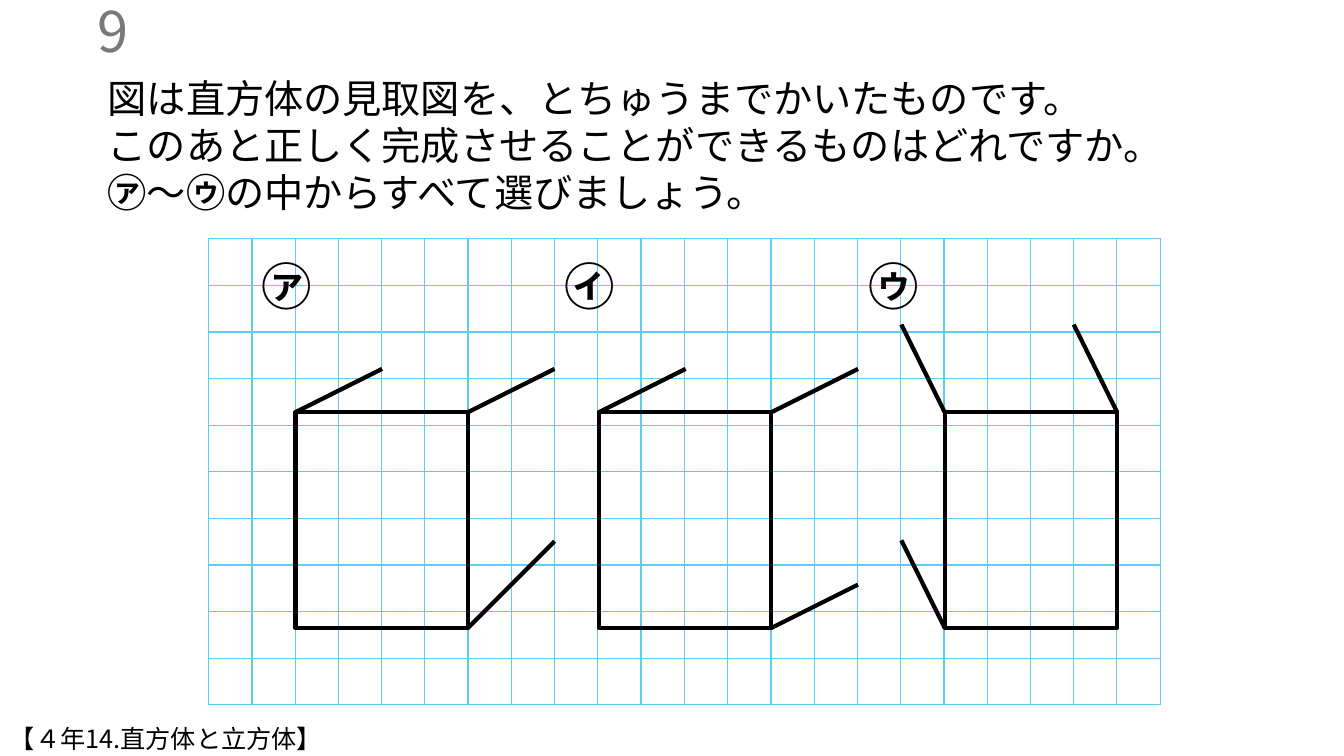
from lxml import etree
from pptx import Presentation, util as u
from pptx.dml.color import RGBColor
from pptx.enum import shapes, text
from pptx.oxml import ns

FONT = "Noto Sans CJK JP"
INK, GRAY, SKY = "000000", "797979", "61CBF4"


def color(code):
    return RGBColor.from_string(code)


def child(node, tag, **attrs):
    return etree.SubElement(node, ns.qn(tag), attrs)


class Page:
    """Holds the style and the current slide."""

    def __init__(self, deck):
        self.slide = deck.slides.add_slide(deck.slide_layouts[6])
        self.items = self.slide.shapes

    def stroke(self, line):
        line.color.rgb = color(INK)
        line.width = u.Pt(3)

    def grid(self, left, top, rows, cols, step):
        frame = self.items.add_table(
            rows, cols, u.Inches(left), u.Inches(top),
            u.Inches(cols * step), u.Inches(rows * step))
        table = frame.table
        table.first_row = table.horz_banding = False
        for row in table.rows:
            row.height = u.Inches(step)
        for col in table.columns:
            col.width = u.Inches(step)
        for cell in table.iter_cells():
            self.border(cell)

    def border(self, cell):
        props = cell._tc.get_or_add_tcPr()
        for side in ("L", "R", "T", "B"):
            edge = child(props, "a:ln" + side, w="12700")
            child(child(edge, "a:solidFill"), "a:srgbClr", val=SKY)
        cell.fill.background()
        para = cell.text_frame.paragraphs[0]
        end = child(para._p, "a:endParaRPr", lang="ja-JP", sz="1800")
        for tag in ("a:latin", "a:ea"):
            child(end, tag, typeface=FONT)

    def words(self, box, lines, size, tint=INK, tight=True):
        frame = self.items.add_textbox(*map(u.Inches, box)).text_frame
        frame.word_wrap = True
        if tight:
            frame.margin_top = u.Inches(0.08)
        for i, runs in enumerate(lines):
            para = frame.add_paragraph() if i else frame.paragraphs[0]
            if tight:
                para.line_spacing = u.Pt(size * 1.2)
            for part, bold in runs:
                run = para.add_run()
                run.text = part
                run.font.size = u.Pt(size)
                run.font.bold = bold
                run.font.name = FONT
                run.font.color.rgb = color(tint)
                child(run._r.get_or_add_rPr(), "a:ea", typeface=FONT)
        return frame

    def line(self, x, y, dx, dy):
        item = self.items.add_connector(
            shapes.MSO_CONNECTOR.STRAIGHT,
            *map(u.Inches, (x, y, x + dx, y + dy)))
        self.stroke(item.line)
        child(item._element.spPr, "a:effectLst")

    def solid(self, x, y, wide, high, edges):
        face = self.items.add_shape(
            shapes.MSO_SHAPE.RECTANGLE, *map(u.Inches, (x, y, wide, high)))
        face.shadow.inherit = False
        face.fill.background()
        self.stroke(face.line)
        for right, low, dx, dy in edges:
            self.line(x + right * wide, y + low * high, dx, dy)


def main():
    deck = Presentation()
    deck.slide_width, deck.slide_height = u.Inches(13.33), u.Inches(7.5)
    page = Page(deck)
    for side in range(2):
        page.grid(2.07 + side * 4.72, 2.37, 10, 11, 4.72 / 11)
    page.words((0.97, 0.66, 11.08, 1.51), [
        [("図は直方体の見取図を、とちゅうまでかいたものです。", False)],
        [("このあと正しく完成させることができるものはどれですか。", False)],
        [("㋐", True), ("〜", False), ("㋒", True),
         ("の中からすべて選びましょう。", False)],
    ], 28)
    number = page.words((-1.63, 0.1, 3, 0.4), [[("9", False)]], 40, GRAY, False)
    number.vertical_anchor = text.MSO_ANCHOR.MIDDLE
    number.paragraphs[0].alignment = text.PP_ALIGN.RIGHT

    rise = 0.86, -0.43
    steep = 0.86, -0.86
    back = -0.43, -0.87
    solids = [
        ("㋐", 2.5, 2.93, rise, (1, 1, *steep)),
        ("㋑", 5.5, 5.94, rise, (1, 1, *rise)),
        ("㋒", 8.52, 9.37, back, (0, 1, *back)),
    ]
    for mark, left, x, top, low in solids:
        page.solid(x, 4.09, 1.71, 2.14, [(0, 0, *top), (1, 0, *top), low])
        page.words((left, 2.45, 0.75, 0.71), [[(mark, True)]], 36)
    page.words((0, 7.1, 7.49, 0.4), [[("【４年14.直方体と立方体】", False)]], 18)
    deck.save("out.pptx")


if __name__ == "__main__":
    main()
